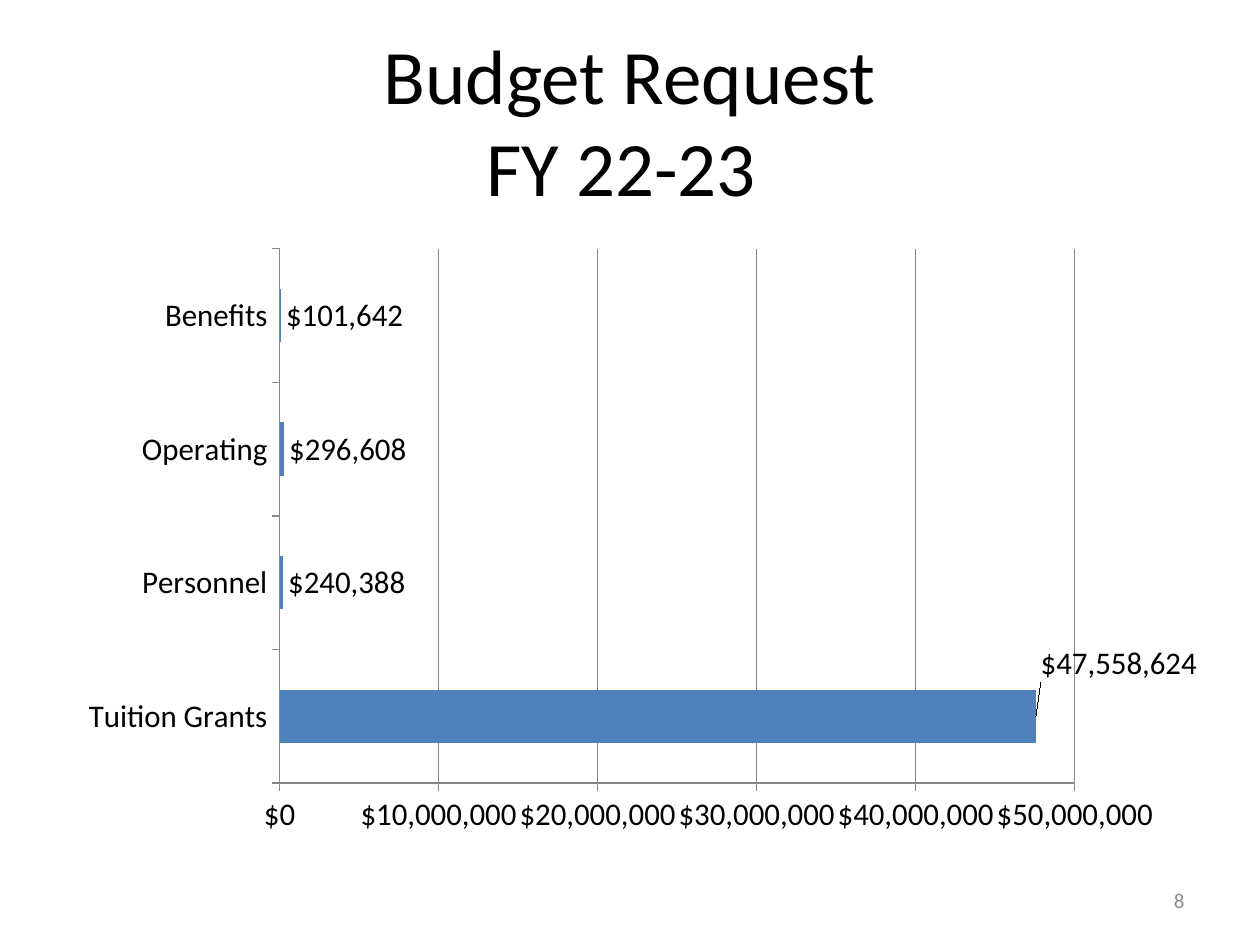
"""Build the budget request slide with its bar chart."""
import dataclasses

import lxml.etree
import pptx
import pptx.chart.data
import pptx.dml.color
import pptx.enum.chart
import pptx.enum.text
import pptx.oxml.ns
import pptx.util
from pptx.util import Cm


@dataclasses.dataclass(frozen=True)
class Theme:
    font: str = "Calibri"
    text: str = "000000"
    muted: str = "8C8C8C"
    bar: str = "4F81BD"
    line: str = "868686"
    title_size: int = 44
    chart_size: int = 18
    number_size: int = 12


theme = Theme()
color = pptx.dml.color.RGBColor.from_string


def write_text(shape, text, *, size, fill, align, bottom=0.13):
    frame = shape.text_frame
    frame.word_wrap = True
    frame.auto_size = pptx.enum.text.MSO_AUTO_SIZE.NONE
    frame.vertical_anchor = pptx.enum.text.MSO_ANCHOR.MIDDLE
    frame.margin_bottom = Cm(bottom)
    frame.text = text
    paragraph = frame.paragraphs[0]
    paragraph.alignment = align
    for run in paragraph.runs:
        run.font.name = theme.font
        run.font.size = pptx.util.Pt(size)
        run.font.color.rgb = color(fill)


def make_layout(**settings):
    layout = lxml.etree.Element(pptx.oxml.ns.qn("c:layout"))
    manual = lxml.etree.SubElement(layout, pptx.oxml.ns.qn("c:manualLayout"))
    for name, value in settings.items():
        lxml.etree.SubElement(manual, pptx.oxml.ns.qn(f"c:{name}")).set("val", str(value))
    return layout


presentation = pptx.Presentation()
presentation.slide_width = Cm(25.4)
presentation.slide_height = Cm(19.05)
slide = presentation.slides.add_slide(presentation.slide_layouts.get_by_name("Title Only"))

title = slide.shapes.title
title.left, title.top, title.width, title.height = Cm(1.27), Cm(0.38), Cm(22.86), Cm(4.75)
write_text(title, "Budget Request\vFY 22-23 ", size=theme.title_size, fill=theme.text,
           align=pptx.enum.text.PP_ALIGN.CENTER, bottom=0.81)

slide_number = slide.shapes.add_textbox(Cm(18.2), Cm(17.65), Cm(5.93), Cm(1.01))
write_text(slide_number, "8", size=theme.number_size, fill=theme.muted,
           align=pptx.enum.text.PP_ALIGN.RIGHT)

budget = {
    "Tuition Grants": 47558624,
    "Personnel": 240388,
    "Operating": 296608,
    "Benefits": 101642,
}
currency = '"$"#,##0'
chart_data = pptx.chart.data.CategoryChartData(number_format=currency)
chart_data.categories = list(budget)
chart_data.add_series("Series 1", list(budget.values()))
chart = slide.shapes.add_chart(
    pptx.enum.chart.XL_CHART_TYPE.BAR_CLUSTERED,
    Cm(1.27), Cm(4.45), Cm(22.86), Cm(12.57), chart_data,
).chart
chart.has_legend = False
chart.has_title = False

plot = chart.plots[0]
plot.gap_width = 150
plot.vary_by_categories = False
series = plot.series[0]
series.format.fill.solid()
series.format.fill.fore_color.rgb = color(theme.bar)

labels = series.data_labels
labels.show_value = True
labels.number_format = currency
labels.number_format_is_linked = False
labels.position = pptx.enum.chart.XL_LABEL_POSITION.OUTSIDE_END
grants_label = series.points[0].data_label
grants_label.position = pptx.enum.chart.XL_LABEL_POSITION.OUTSIDE_END

for font in (chart.font, labels.font, grants_label.font):
    font.name = theme.font
    font.size = pptx.util.Pt(theme.chart_size)
    font.color.rgb = color(theme.text)

value_axis = chart.value_axis
value_axis.minimum_scale = 0
value_axis.maximum_scale = 50_000_000
value_axis.major_unit = 10_000_000
value_axis.has_major_gridlines = True
value_axis.tick_labels.number_format = currency
value_axis.tick_labels.number_format_is_linked = False
for axis in (value_axis, chart.category_axis):
    axis.major_tick_mark = pptx.enum.chart.XL_TICK_MARK.OUTSIDE
    axis.minor_tick_mark = pptx.enum.chart.XL_TICK_MARK.NONE
for owner in (value_axis, chart.category_axis, value_axis.major_gridlines):
    owner.format.line.color.rgb = color(theme.line)
    owner.format.line.width = pptx.util.Pt(0.75)

chart_xml = chart.element
plot_area = chart_xml.find(".//" + pptx.oxml.ns.qn("c:plotArea"))
for layout in plot_area.findall(pptx.oxml.ns.qn("c:layout")):
    plot_area.remove(layout)
plot_area.insert(0, make_layout(layoutTarget="inner", xMode="edge", yMode="edge",
                                x=0.195, y=0.045, w=0.716, h=0.857))
label_index = chart_xml.find(".//" + pptx.oxml.ns.qn("c:dLbl")).find(pptx.oxml.ns.qn("c:idx"))
label_index.addnext(make_layout(x=0, y=-0.085))

presentation.save("out.pptx")
